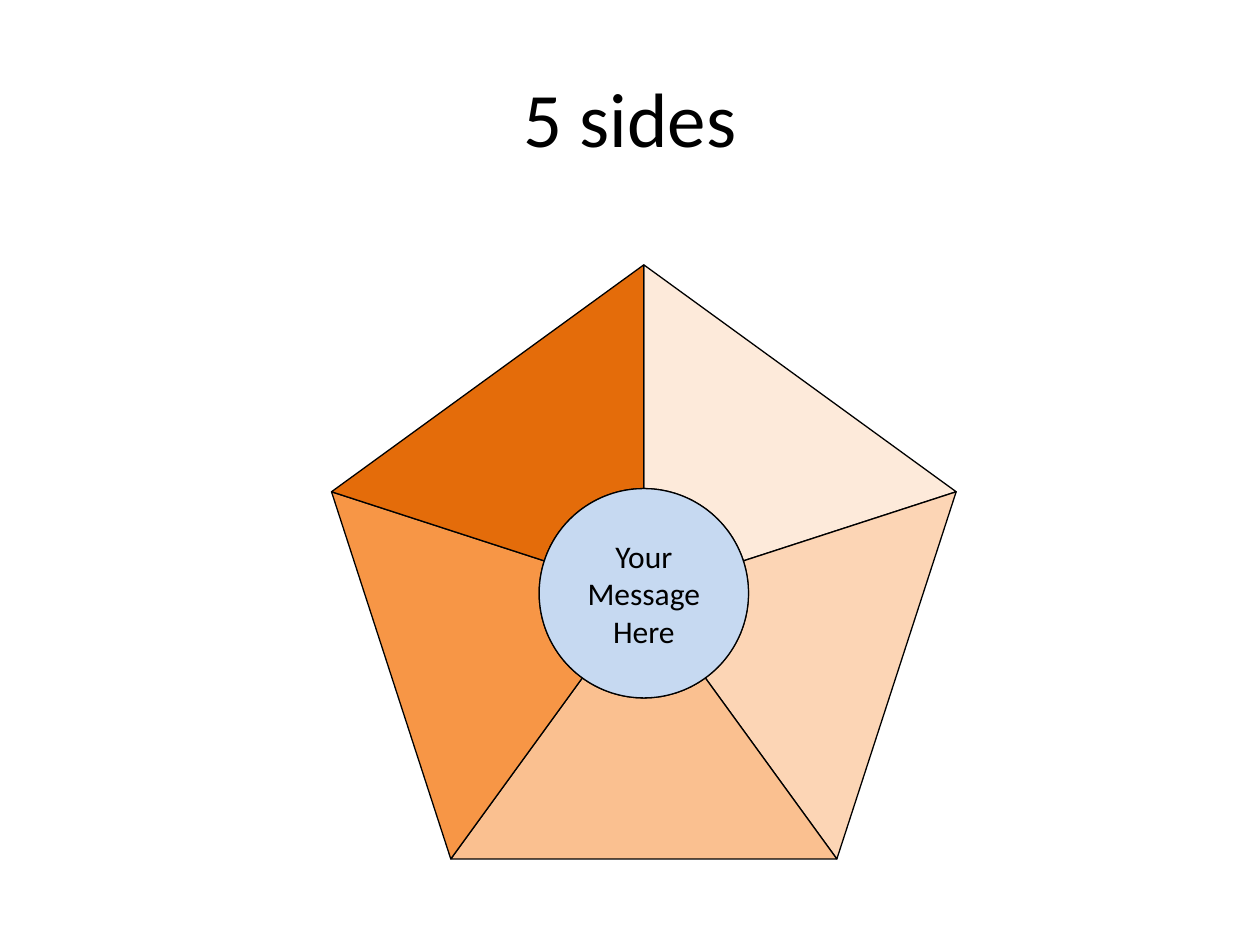
"""Build a slide with a five-sided wheel around a central message."""
import math

from pptx import Presentation
from pptx.dml.color import RGBColor
from pptx.enum.shapes import MSO_SHAPE
from pptx.enum.text import MSO_ANCHOR, PP_ALIGN
from pptx.util import Cm, Pt

OVAL = MSO_SHAPE.OVAL
MIDDLE = MSO_ANCHOR.MIDDLE
CENTER = PP_ALIGN.CENTER

BLACK = RGBColor(0x00, 0x00, 0x00)
PALE_BLUE = RGBColor(0xC6, 0xD9, 0xF1)
SIDE_COLORS = (
    RGBColor(0xFD, 0xEA, 0xDA),
    RGBColor(0xFC, 0xD5, 0xB5),
    RGBColor(0xFA, 0xC0, 0x90),
    RGBColor(0xF7, 0x96, 0x46),
    RGBColor(0xE4, 0x6C, 0x0A),
)

CENTER_X, CENTER_Y = 12.98, 11.96
OUTER_RADIUS, INNER_RADIUS = 6.62, 2.11
ARC_STEPS = 16


class WheelSlide:
    font_name = "Calibri"
    line_width = Pt(0)

    def __init__(self, slide):
        self.slide = slide

    def set_text(self, shape, text, size):
        text_frame = shape.text_frame
        text_frame.word_wrap = True
        text_frame.vertical_anchor = MIDDLE
        text_frame.text = text
        for paragraph in text_frame.paragraphs:
            paragraph.alignment = CENTER
            for run in paragraph.runs:
                run.font.name = self.font_name
                run.font.size = Pt(size)
                run.font.color.rgb = BLACK

    def paint(self, shape, color):
        shape.shadow.inherit = False
        shape.fill.solid()
        shape.fill.fore_color.rgb = color
        shape.line.color.rgb = BLACK
        shape.line.width = self.line_width

    def title(self, text, left, top, width, height):
        box = self.slide.shapes.add_textbox(Cm(left), Cm(top), Cm(width), Cm(height))
        self.set_text(box, text, 44)

    def point(self, radius, angle):
        return (
            Cm(CENTER_X + radius * math.sin(angle)),
            Cm(CENTER_Y - radius * math.cos(angle)),
        )

    def side(self, index, count, color):
        sweep = 2 * math.pi / count
        start = index * sweep
        end = start + sweep
        arc = [
            self.point(INNER_RADIUS, end - sweep * step / ARC_STEPS)
            for step in range(ARC_STEPS + 1)
        ]
        builder = self.slide.shapes.build_freeform(*self.point(OUTER_RADIUS, start))
        builder.add_line_segments([self.point(OUTER_RADIUS, end), *arc], close=True)
        self.paint(builder.convert_to_shape(), color)

    def hub(self, text, color):
        diameter = Cm(2 * INNER_RADIUS)
        circle = self.slide.shapes.add_shape(
            OVAL,
            Cm(CENTER_X - INNER_RADIUS),
            Cm(CENTER_Y - INNER_RADIUS),
            diameter,
            diameter,
        )
        self.paint(circle, color)
        text_frame = circle.text_frame
        text_frame.margin_left = text_frame.margin_right = Cm(0)
        text_frame.margin_top = text_frame.margin_bottom = Cm(0)
        self.set_text(circle, text, 18)


def main():
    presentation = Presentation()
    presentation.slide_width = Cm(25.4)
    presentation.slide_height = Cm(19.05)
    wheel = WheelSlide(presentation.slides.add_slide(presentation.slide_layouts[6]))
    wheel.title("5 sides", 1.27, 0.76, 22.86, 3.18)
    for index, color in enumerate(SIDE_COLORS):
        wheel.side(index, len(SIDE_COLORS), color)
    wheel.hub("Your\nMessage\nHere", PALE_BLUE)
    presentation.save("out.pptx")


if __name__ == "__main__":
    main()
